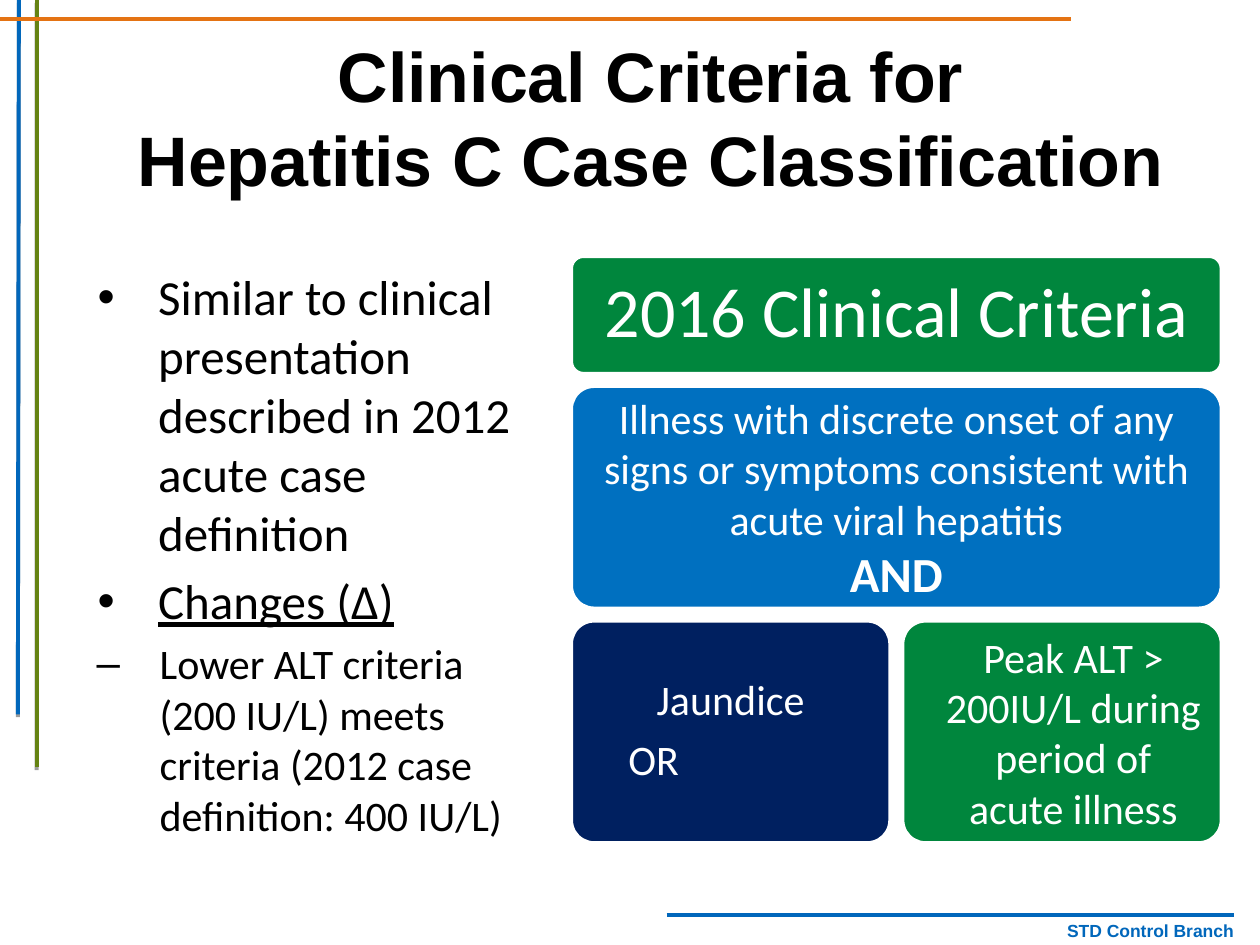
from lxml import etree
from pptx import Presentation
from pptx.dml.color import RGBColor
from pptx.enum.shapes import MSO_CONNECTOR, MSO_SHAPE
from pptx.enum.text import MSO_ANCHOR, PP_ALIGN
from pptx.oxml.ns import qn
from pptx.util import Cm, Pt

LINE, ROUNDED = MSO_CONNECTOR.STRAIGHT, MSO_SHAPE.ROUNDED_RECTANGLE
MIDDLE = MSO_ANCHOR.MIDDLE
LEFT, CENTER, RIGHT = PP_ALIGN.LEFT, PP_ALIGN.CENTER, PP_ALIGN.RIGHT

BLACK = RGBColor(0x00, 0x00, 0x00)
WHITE = RGBColor(0xFF, 0xFF, 0xFF)
BLUE = RGBColor(0x01, 0x67, 0xBB)
OLIVE = RGBColor(0x65, 0x83, 0x13)
ORANGE = RGBColor(0xE4, 0x73, 0x13)
GREEN = RGBColor(0x00, 0x86, 0x3D)
SKY = RGBColor(0x00, 0x70, 0xC0)
NAVY = RGBColor(0x00, 0x20, 0x60)

TITLE = "Clinical Criteria for\vHepatitis C Case Classification"
FOOTER = "STD Control Branch"

# text, size, underline, bullet, level, left margin, hanging indent
BULLETS = [
    ("Similar to clinical presentation described in 2012 acute case definition",
     28, False, "•", 0, 2.51, 1.22),
    ("Changes (∆)", 28, True, "•", 0, 2.51, 1.22),
    ("Lower ALT criteria (200 IU/L) meets criteria (2012 case definition: 400 IU/L)",
     24, False, "–", 1, 2.54, 1.27),
]

# x1, y1, x2, y2, colour, shadow
RULES = [
    (13.44, 18.44, 24.87, 18.44, BLUE, False),
    (0.38, 0, 0.36, 14.4, BLUE, True),
    (0.74, 0, 0.74, 15.47, OLIVE, True),
    (0, 0.38, 21.59, 0.38, ORANGE, False),
]

# height, inset, tiles; a tile is its fill and its paragraphs:
# text, size, bold, alignment, left margin, line spacing, space before
ROWS = [
    (2.34, 0.42, [
        (GREEN, [("2016 Clinical Criteria", 40, False, CENTER, 0, 0.9, 0)]),
    ]),
    (4.45, 0.25, [
        (SKY, [
            ("Illness with discrete onset of any signs or symptoms consistent "
             "with acute viral hepatitis", 24, False, CENTER, 0, 1, 0),
            ("AND", 28, True, CENTER, 0, 1, 0),
        ]),
    ]),
    (4.45, 0.25, [
        (NAVY, [
            ("Jaundice", 24, False, CENTER, 0, 0.9, 0),
            ("OR", 24, False, LEFT, 0.76, 0.9, 8.4),
        ]),
        (GREEN, [("Peak ALT > 200IU/L during period of\vacute illness",
                  24, False, CENTER, 0.46, 1, 0)]),
    ]),
]
TILE_LEFT, TILE_TOP, TILE_WIDTH, GAP = 11.53, 5.18, 13.08, 0.28


def add_rule(s, x1, y1, x2, y2, color, shadow):
    sp = s.shapes.add_connector(LINE, Cm(x1), Cm(y1), Cm(x2), Cm(y2))
    sp.line.color.rgb = color
    sp.line.width = Pt(2.25)
    effects = etree.SubElement(sp._element.spPr, qn("a:effectLst"))
    if shadow:
        outer = etree.SubElement(effects, qn("a:outerShdw"), dist=str(Pt(1.6)),
                                 dir="5400000", rotWithShape="0")
        clr = etree.SubElement(outer, qn("a:srgbClr"), val="000000")
        etree.SubElement(clr, qn("a:alpha"), val="38000")


def add_box(s, x, y, w, h):
    tf = s.shapes.add_textbox(Cm(x), Cm(y), Cm(w), Cm(h)).text_frame
    tf.word_wrap = True
    tf.vertical_anchor = MIDDLE
    return tf


def next_paragraph(tf, i):
    return tf.add_paragraph() if i else tf.paragraphs[0]


def add_text(p, text, size, font, color, bold=False, underline=False):
    for i, part in enumerate(text.split("\v")):
        if i:
            p.add_line_break()
        r = p.add_run()
        r.text = part
        r.font.size = Pt(size)
        r.font.name = font
        r.font.bold = bold
        r.font.underline = underline
        r.font.color.rgb = color


def add_bullets(tf):
    for i, (text, size, underline, bullet, level, margin, hang) in enumerate(BULLETS):
        p = next_paragraph(tf, i)
        p.level = level
        pPr = p._p.get_or_add_pPr()
        pPr.set("marL", str(Cm(margin)))
        pPr.set("indent", str(-Cm(hang)))
        etree.SubElement(pPr, qn("a:buFont"), typeface="Arial")
        etree.SubElement(pPr, qn("a:buChar"), char=bullet)
        if i:
            p.space_before = Pt(size * 0.2)
        add_text(p, text, size, "Calibri", BLACK, underline=underline)


def add_tile(s, x, y, w, h, inset, fill, paragraphs):
    sp = s.shapes.add_shape(ROUNDED, Cm(x), Cm(y), Cm(w), Cm(h))
    sp.adjustments[0] = 0.1
    sp.shadow.inherit = False
    sp.fill.solid()
    sp.fill.fore_color.rgb = fill
    sp.line.color.rgb = WHITE
    sp.line.width = Pt(1.25)
    tf = sp.text_frame
    tf.word_wrap = True
    tf.vertical_anchor = MIDDLE
    tf.margin_left = tf.margin_right = tf.margin_top = tf.margin_bottom = Cm(inset)
    for i, (text, size, bold, align, margin, spacing, before) in enumerate(paragraphs):
        p = next_paragraph(tf, i)
        p.alignment = align
        p.line_spacing = spacing
        if before:
            p.space_before = Pt(before)
        p._p.get_or_add_pPr().set("marL", str(Cm(margin)))
        add_text(p, text, size, "Calibri", WHITE, bold)


def main():
    prs = Presentation()
    prs.slide_width, prs.slide_height = Cm(25.4), Cm(19.05)
    s = prs.slides.add_slide(prs.slide_layouts[6])

    p = add_box(s, 13.69, 18.24, 11.43, 1.02).paragraphs[0]
    p.alignment = RIGHT
    add_text(p, FOOTER, 10, "Arial", BLUE, bold=True)
    for rule in RULES:
        add_rule(s, *rule)

    p = add_box(s, 1.9, 0.76, 22.43, 3.18).paragraphs[0]
    p.alignment = CENTER
    add_text(p, TITLE, 40, "Arial", BLACK, bold=True)
    add_bullets(add_box(s, 0.43, 5.18, 10.8, 11.94))

    y = TILE_TOP
    for h, inset, tiles in ROWS:
        w = (TILE_WIDTH - GAP * (len(tiles) - 1)) / len(tiles)
        for i, (fill, paragraphs) in enumerate(tiles):
            add_tile(s, TILE_LEFT + i * (w + GAP), y, w, h, inset, fill, paragraphs)
        y += h + GAP

    prs.save("out.pptx")


if __name__ == "__main__":
    main()
